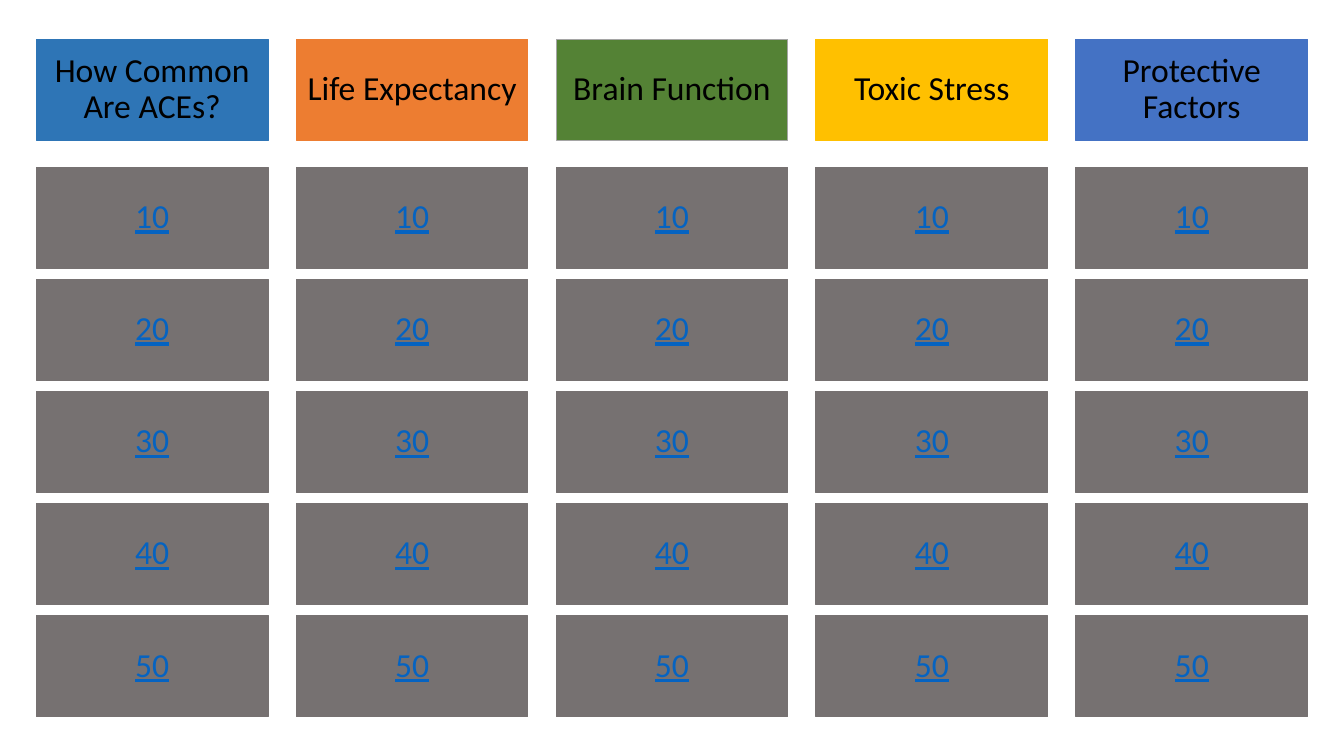
from pptx import Presentation
from pptx.dml.color import RGBColor
from pptx.enum import shapes, text
from pptx.util import Pt

CATEGORIES = [
    ("How Common Are ACEs?", "2E75B6", "2E75B6"),
    ("Life Expectancy", "ED7D31", "ED7D31"),
    ("Brain Function", "548235", "A5A5A5"),
    ("Toxic Stress", "FFC000", "FFC000"),
    ("Protective Factors", "4472C4", "4472C4"),
]
SCORES = [10, 20, 30, 40, 50]
TILE_WIDTH, TILE_HEIGHT = 165.6, 72
COLUMN_PITCH, ROW_PITCH = 185.65, 80.1
FIRST_SCORE_OFFSET = 91.4


def color(value):
    return RGBColor.from_string(value)


def write(box, words, size=24, ink="000000", underline=False):
    """Put one centred paragraph in the box."""
    frame = box.text_frame
    frame.word_wrap = True
    frame.vertical_anchor = text.MSO_ANCHOR.MIDDLE
    para = frame.paragraphs[0]
    para.alignment = text.PP_ALIGN.CENTER
    para.line_spacing = 0.9
    span = para.add_run()
    span.text = words
    span.font.name = "Calibri"
    span.font.size = Pt(size)
    span.font.underline = underline
    span.font.color.rgb = color(ink)


def add_tile(page, left, top, words, fill, line, **text_format):
    box = page.shapes.add_shape(
        shapes.MSO_SHAPE.RECTANGLE,
        Pt(left), Pt(top), Pt(TILE_WIDTH), Pt(TILE_HEIGHT))
    box.shadow.inherit = False
    box.fill.solid()
    box.fill.fore_color.rgb = color(fill)
    box.line.color.rgb = color(line)
    box.line.width = Pt(0.75)
    write(box, words, **text_format)


def add_column(page, left, top, title, fill, line):
    """Place a category heading with its score tiles below."""
    add_tile(page, left, top, title, fill, line)
    for row, score in enumerate(SCORES):
        score_top = top + FIRST_SCORE_OFFSET + row * ROW_PITCH
        add_tile(page, left, score_top, str(score), "767171", "767171",
                 ink="0563C1", underline=True)


def add_board(page, left, top):
    for index, category in enumerate(CATEGORIES):
        add_column(page, left + index * COLUMN_PITCH, top, *category)


def main():
    deck = Presentation()
    deck.slide_width, deck.slide_height = Pt(960), Pt(540)
    page = deck.slides.add_slide(deck.slide_layouts[6])
    add_board(page, left=25.9, top=28.1)
    deck.save("out.pptx")


if __name__ == "__main__":
    main()
